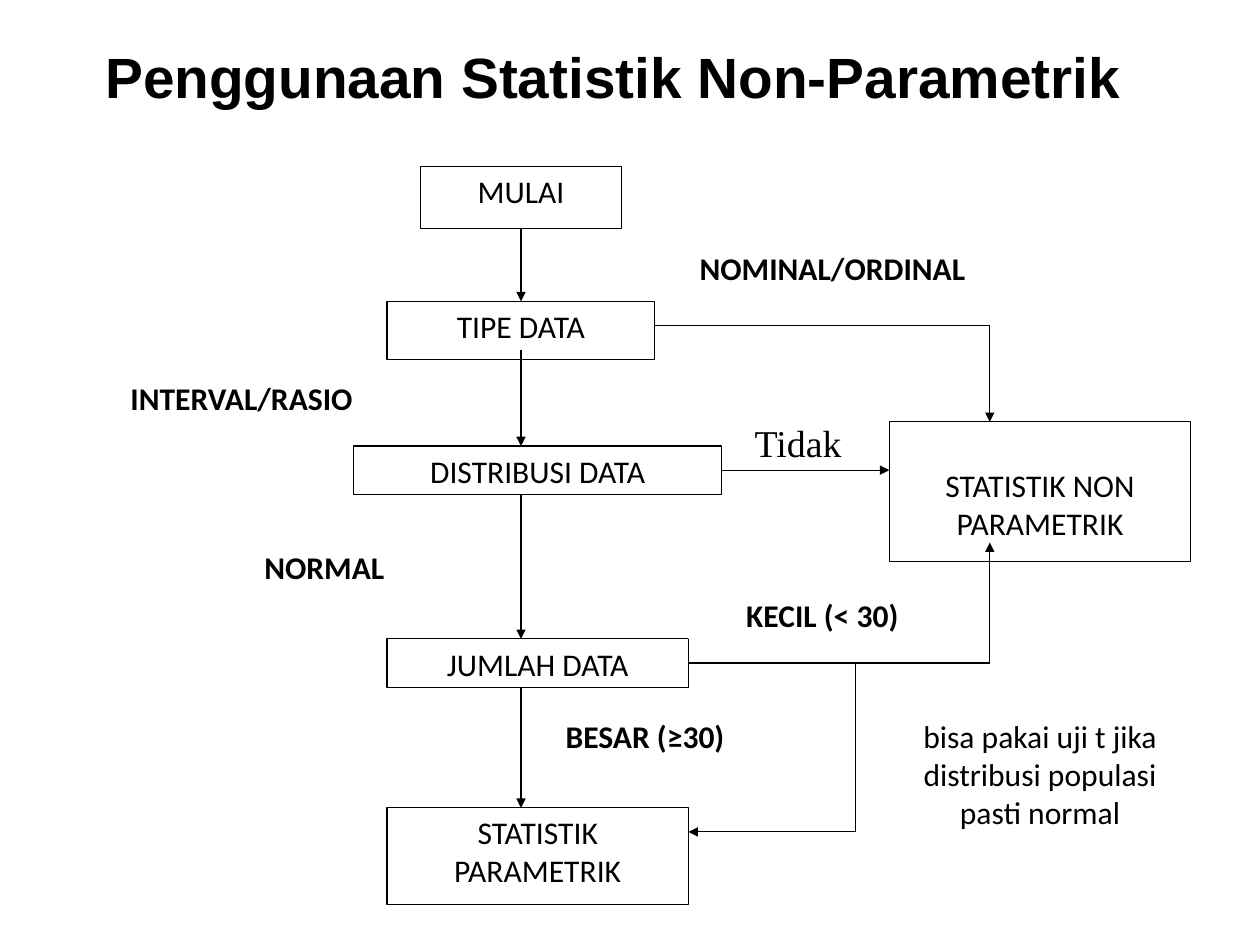
from lxml import etree
from pptx import Presentation
from pptx.dml.color import RGBColor
from pptx.enum.shapes import MSO_CONNECTOR, MSO_SHAPE
from pptx.enum.text import MSO_ANCHOR, PP_ALIGN
from pptx.oxml.ns import qn
from pptx.util import Inches, Pt

RECTANGLE = MSO_SHAPE.RECTANGLE
STRAIGHT = MSO_CONNECTOR.STRAIGHT
TOP = MSO_ANCHOR.TOP
LEFT, CENTER = PP_ALIGN.LEFT, PP_ALIGN.CENTER

COLORS = {"ink": "000000", "paper": "FFFFFF"}
GRID_LEFT, GRID_TOP = 1.05, 1.38
COLUMN, ROW = 0.295, 0.2125
LINE_WIDTH = Pt(0.75)
SPINE = 12

STEPS = [
    ("MULAI", 9, 0.4, 6, 2.6),
    ("TIPE DATA", 8, 6, 8, 2.4),
    ("DISTRIBUSI DATA", 7, 12, 11, 2),
    ("JUMLAH DATA", 8, 20, 9, 2),
    ("STATISTIK PARAMETRIK", 8, 27, 9, 4),
]
LABELS = [
    ("INTERVAL/RASIO", 0, 9, 10, 2, LEFT, True),
    ("NORMAL", 4, 16, 7, 2, LEFT, True),
    ("NOMINAL/ORDINAL", 17, 3.6, 12, 3, LEFT, True),
    ("KECIL (< 30)", 17, 18, 8, 2, CENTER, True),
    ("BESAR (≥30)", 13, 23, 8, 3, LEFT, True),
    ("bisa pakai uji t jika distribusi populasi pasti normal",
     23, 23, 9, 7.5, CENTER, False),
]
ROUTES = [
    [(SPINE, 3), (SPINE, 6)],
    [(SPINE, 8), (SPINE, 12)],
    [(SPINE, 14), (SPINE, 20)],
    [(SPINE, 22), (SPINE, 27)],
    [(16, 7), (26, 7), (26, 11)],
    [(18, 13), (23, 13)],
    [(17, 21), (26, 21), (26, 16)],
    [(22, 21), (22, 28), (17, 28)],
]


def color(name):
    return RGBColor.from_string(COLORS[name])


def grid_x(column):
    return Inches(GRID_LEFT + column * COLUMN)


def grid_y(row):
    return Inches(GRID_TOP + row * ROW)


def write(shape, lines, align=LEFT, size=20, font="Calibri", bold=False,
          top_inset=0.05):
    frame = shape.text_frame
    frame.word_wrap = True
    frame.vertical_anchor = TOP
    frame.margin_left = frame.margin_right = Inches(0.1)
    frame.margin_top, frame.margin_bottom = Inches(top_inset), Inches(0.05)
    for index, line in enumerate(lines):
        paragraph = frame.add_paragraph() if index else frame.paragraphs[0]
        paragraph.alignment = align
        run = paragraph.add_run()
        run.text = line
        run.font.name = font
        run.font.size = Pt(size)
        run.font.bold = bold
        run.font.color.rgb = color("ink")


def add_box(slide, lines, column, row, columns, rows, outlined=True, **style):
    shape = slide.shapes.add_shape(
        RECTANGLE, grid_x(column), grid_y(row),
        Inches(columns * COLUMN), Inches(rows * ROW))
    shape.shadow.inherit = False
    shape.fill.solid()
    shape.fill.fore_color.rgb = color("paper")
    if outlined:
        shape.line.color.rgb = color("ink")
        shape.line.width = LINE_WIDTH
    else:
        shape.line.fill.background()
    write(shape, lines, **style)


def add_route(slide, points):
    for start, end in zip(points, points[1:]):
        connector = slide.shapes.add_connector(
            STRAIGHT, grid_x(start[0]), grid_y(start[1]),
            grid_x(end[0]), grid_y(end[1]))
        connector.line.color.rgb = color("ink")
        connector.line.width = LINE_WIDTH
        if end == points[-1]:
            outline = connector.line._get_or_add_ln()
            etree.SubElement(outline, qn("a:tailEnd"), type="triangle")
        etree.SubElement(connector._element.spPr, qn("a:effectLst"))


def add_text(slide, text, left, top, width, height, **style):
    box = slide.shapes.add_textbox(
        Inches(left), Inches(top), Inches(width), Inches(height))
    write(box, [text], **style)


def main():
    presentation = Presentation()
    presentation.slide_width = Inches(11.1)
    presentation.slide_height = Inches(8.3)
    slide = presentation.slides.add_slide(presentation.slide_layouts[6])

    add_text(slide, "Penggunaan Statistik Non-Parametrik", 0.83, 0.25, 10, 1.17,
             size=36, font="Arial", bold=True, top_inset=0.12)
    for text, *place in STEPS:
        add_box(slide, [text], *place, align=CENTER)
    add_box(slide, ["STATISTIK NON", "PARAMETRIK"], 23, 11, 9, 5.8,
            align=CENTER, top_inset=0.39)
    for text, *place, align, bold in LABELS:
        add_box(slide, [text], *place, outlined=False, align=align, bold=bold)
    for points in ROUTES:
        add_route(slide, points)
    add_text(slide, "Tidak", 6.55, 3.65, 1.25, 0.5,
             size=24, font="Times New Roman")

    presentation.save("out.pptx")


if __name__ == "__main__":
    main()
